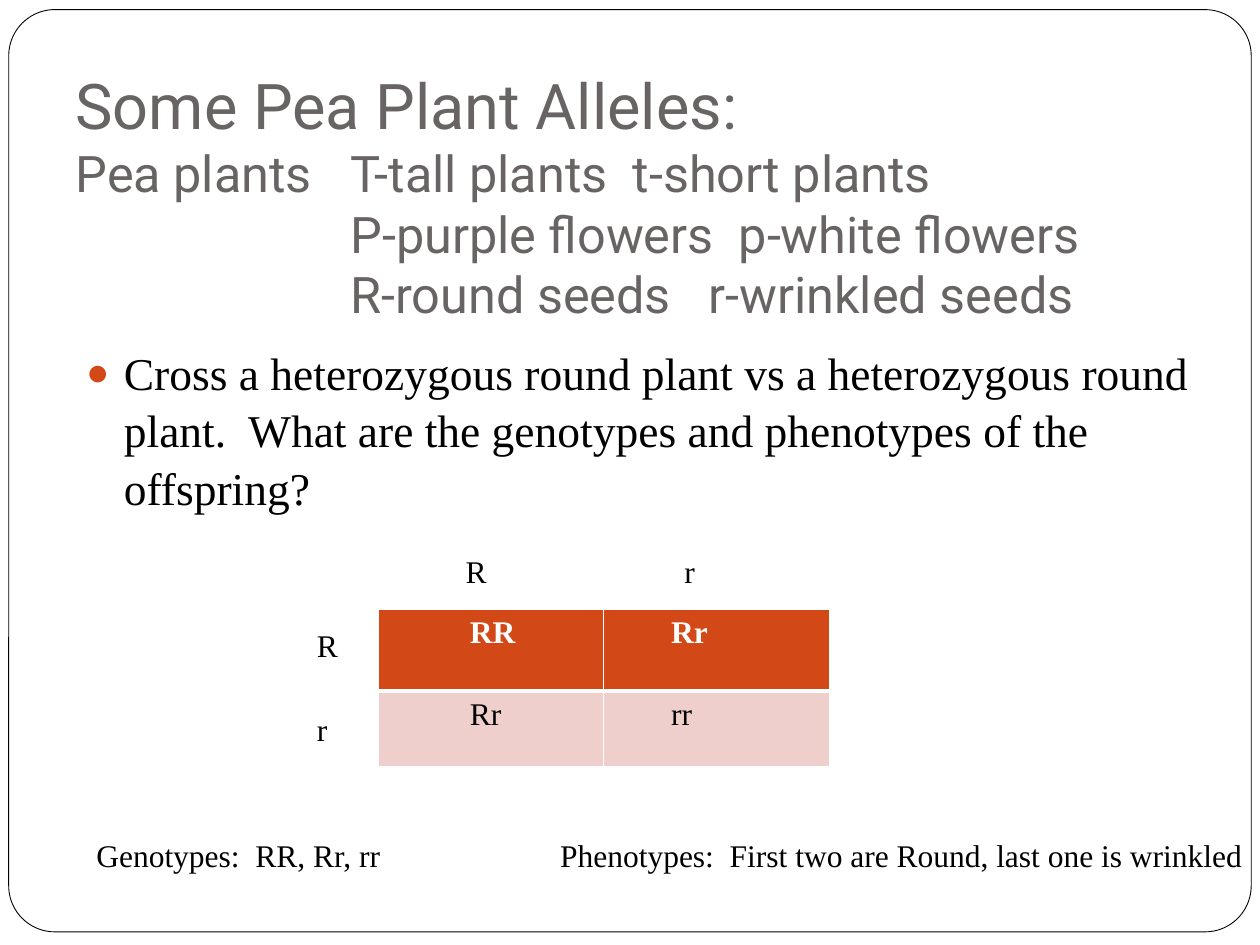
from lxml.etree import SubElement
from pptx import Presentation
from pptx.dml.color import RGBColor
from pptx.enum.shapes import MSO_SHAPE
from pptx.enum.text import MSO_ANCHOR, MSO_AUTO_SIZE, PP_ALIGN
from pptx.oxml.ns import qn
from pptx.util import Pt

BLACK = RGBColor(0x00, 0x00, 0x00)
WHITE = RGBColor(0xFF, 0xFF, 0xFF)
GREY = RGBColor(0x69, 0x64, 0x64)
ORANGE = RGBColor(0xD3, 0x48, 0x17)
PINK = RGBColor(0xEF, 0xCF, 0xCC)
HEAD_FONT = "Roboto"
BODY_FONT = "Times New Roman"


def place(shape, box):
    shape.left, shape.top, shape.width, shape.height = map(Pt, box)


def style(font, size, color, name=BODY_FONT, bold=False):
    font.size, font.name, font.bold = Pt(size), name, bold
    font.color.rgb = color


def add_tab_stop(para, position):
    tabs = SubElement(para._p.get_or_add_pPr(), qn("a:tabLst"))
    SubElement(tabs, qn("a:tab"), pos=str(Pt(position)), algn="l")


def add_frame(page, box):
    frame = page.shapes.add_shape(MSO_SHAPE.ROUNDED_RECTANGLE, *map(Pt, box))
    frame.adjustments[0] = 0.05
    frame.shadow.inherit = False
    frame.fill.solid()
    frame.fill.fore_color.rgb = WHITE
    frame.line.color.rgb = BLACK
    frame.line.width = Pt(0.5)
    # Send behind the placeholders
    page.shapes._spTree.insert(2, frame._element)


def fill_title(page, box, heading, lines):
    title = page.shapes.title
    place(title, box)
    text = title.text_frame
    text.auto_size = MSO_AUTO_SIZE.NONE
    text.vertical_anchor = MSO_ANCHOR.BOTTOM
    text.margin_bottom = Pt(7.2)
    para = text.paragraphs[0]
    para.alignment = PP_ALIGN.LEFT
    add_tab_stop(para, 157)
    for index, line in enumerate([heading] + lines):
        if index:
            para.add_line_break()
        span = para.add_run()
        span.text = line
        style(span.font, 28.8 if index else 36, GREY, HEAD_FONT)


def fill_question(page, box, question):
    body = page.placeholders[1]
    place(body, box)
    body.text_frame.auto_size = MSO_AUTO_SIZE.NONE
    para = body.text_frame.paragraphs[0]
    para.text = question
    para.space_before = Pt(5.8)
    para.line_spacing = 1.05
    style(para.font, 26, BLACK)
    # Round orange bullet with a hanging indent
    props = para._p.get_or_add_pPr()
    props.set("marL", str(Pt(21.6)))
    props.set("indent", str(-Pt(21.6)))
    bullet_color = SubElement(props, qn("a:buClr"))
    SubElement(bullet_color, qn("a:srgbClr"), val=str(ORANGE))
    SubElement(props, qn("a:buSzPct"), val="85000")
    SubElement(props, qn("a:buChar"), char="●")
    # Schema order: default run properties come last
    props.append(props.find(qn("a:defRPr")))


def add_label(page, box, words, tab=None):
    label = page.shapes.add_textbox(*map(Pt, box))
    label.text_frame.word_wrap = True
    para = label.text_frame.paragraphs[0]
    para.text = words
    if tab:
        add_tab_stop(para, tab)
    style(para.font, 18, BLACK)
    if tab:
        props = para._p.pPr
        props.append(props.find(qn("a:defRPr")))


def set_borders(cell, bottom_width):
    props = cell._tc.get_or_add_tcPr()
    widths = {"lnL": 1, "lnR": 1, "lnT": 1, "lnB": bottom_width}
    for index, (side, width) in enumerate(widths.items()):
        line = SubElement(props, qn(f"a:{side}"), w=str(Pt(width)))
        fill = SubElement(line, qn("a:solidFill"))
        SubElement(fill, qn("a:srgbClr"), val=str(WHITE))
        props.insert(index, line)


def add_punnett_square(page, box, offspring):
    table = page.shapes.add_table(2, 2, *map(Pt, box)).table
    for row, height in zip(table.rows, (46.8, 43.2)):
        row.height = Pt(height)
    for r, genotypes in enumerate(offspring):
        first = r == 0
        for c, genotype in enumerate(genotypes):
            cell = table.cell(r, c)
            cell.margin_left = Pt((52.5, 38.5)[c])
            cell.fill.solid()
            cell.fill.fore_color.rgb = ORANGE if first else PINK
            set_borders(cell, 3 if first else 1)
            para = cell.text_frame.paragraphs[0]
            para.text = genotype
            style(para.font, 18, WHITE if first else BLACK, bold=first)


def add_cross(page, box):
    left, top = box[:2]
    add_punnett_square(page, box, [["RR", "Rr"], ["Rr", "rr"]])
    # Parent alleles above and beside the square
    for allele, across, down in (("R", 43, -36), ("r", 168, -36),
                                 ("R", -42, 6), ("r", -42, 54)):
        add_label(page, (left + across, top + down, 34.5, 29), allele)


def main():
    deck = Presentation()
    deck.slide_width, deck.slide_height = Pt(720), Pt(540)
    page = deck.slides.add_slide(deck.slide_layouts[1])
    add_frame(page, (5, 5.5, 710, 527))
    fill_title(page, (36, 21.6, 648, 170.6), "Some Pea Plant Alleles:", [
        "Pea plants\tT-tall plants  t-short plants",
        "\tP-purple flowers  p-white flowers",
        "\tR-round seeds   r-wrinkled seeds",
    ])
    fill_question(page, (42, 192, 648, 126),
                  "Cross a heterozygous round plant vs a heterozygous round "
                  "plant.  What are the genotypes and phenotypes of the "
                  "offspring?")
    add_cross(page, (216, 348, 258, 90))
    add_label(page, (48, 474, 672, 29),
              "Genotypes:  RR, Rr, rr\tPhenotypes:  First two are Round, "
              "last one is wrinkled", tab=265)
    deck.save("out.pptx")


if __name__ == "__main__":
    main()
